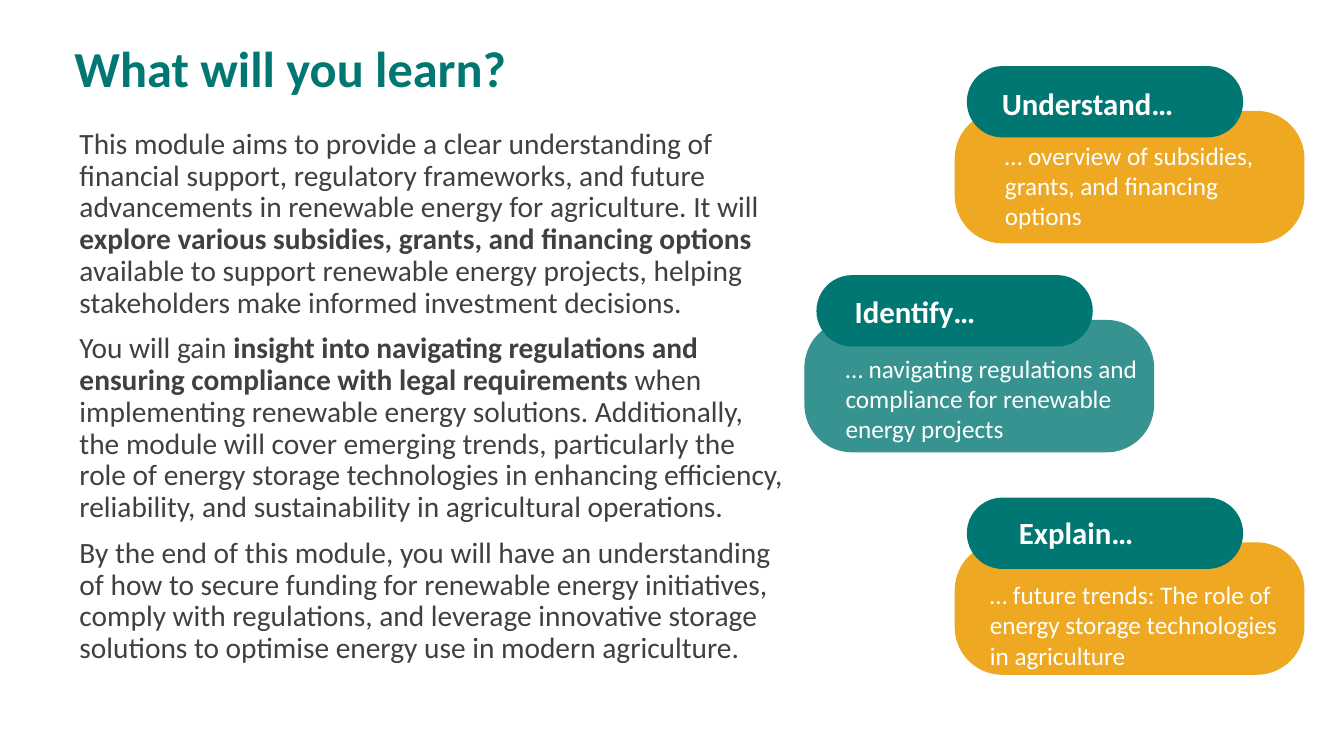
from lxml import etree
from pptx import Presentation
from pptx.dml.color import RGBColor
from pptx.enum import shapes, text
from pptx.oxml import ns
from pptx.util import Pt

TEAL = RGBColor(0x00, 0x77, 0x72)
GOLD = RGBColor(0xEE, 0xA8, 0x21)
GREY = RGBColor(0x40, 0x40, 0x40)
WHITE = RGBColor(0xFF, 0xFF, 0xFF)

GOALS = [
    ("Understand…", "… overview of subsidies, grants, and financing options",
     (682, 79.2), GOLD, 100, (26.5, -22.3), (28.8, 17.3, 213)),
    ("Identify…", "… navigating regulations and compliance for renewable energy projects",
     (574.6, 228.5), TEAL, 79, (28.8, -23.3), (22.3, 20, 227.5)),
    ("Explain…", "… future trends: The role of energy storage technologies in agriculture",
     (682, 387.4), GOLD, 100, (38.8, -23.8), (18, 23, 234.7)),
]

INTRO = [
    [("This module aims to provide a clear understanding of financial support, "
      "regulatory frameworks, and future advancements in renewable energy for "
      "agriculture. It will ", False),
     ("explore various subsidies, grants, and financing options ", True),
     ("available to support renewable energy projects, helping stakeholders make "
      "informed investment decisions.", False)],
    [("You will gain ", False),
     ("insight into navigating regulations and ensuring compliance with legal "
      "requirements ", True),
     ("when implementing renewable energy solutions. Additionally, the module will "
      "cover emerging trends, particularly the role of energy storage technologies "
      "in enhancing efficiency, reliability, and sustainability in agricultural "
      "operations.", False)],
    [("By the end of this module, you will have an understanding of how to secure "
      "funding for renewable energy initiatives, comply with regulations, and "
      "leverage innovative storage solutions to optimise energy use in modern "
      "agriculture.", False)],
]


def style(par, size, color, bold=None):
    """Set the font of a paragraph."""
    font = par.font
    font.name, font.size, font.bold = "Calibri", Pt(size), bold
    font.color.rgb = color


def frame(slide, x, y, w, h):
    """Add a wrapping text box and return its text frame."""
    body = slide.shapes.add_textbox(Pt(x), Pt(y), Pt(w), Pt(h)).text_frame
    body.word_wrap = True
    return body


def label(slide, words, x, y, w, h, size, bold=None):
    """Add one white paragraph of text."""
    par = frame(slide, x, y, w, h).paragraphs[0]
    par.text = words
    style(par, size, WHITE, bold)


def plate(slide, x, y, w, h, round_, color, alpha=100):
    """Add a rounded panel, see-through when alpha is below 100."""
    shape = slide.shapes.add_shape(
        shapes.MSO_SHAPE.ROUNDED_RECTANGLE, Pt(x), Pt(y), Pt(w), Pt(h))
    shape.adjustments[0] = round_
    shape.shadow.inherit = False
    shape.fill.solid()
    shape.fill.fore_color.rgb = color
    shape.line.fill.background()
    if alpha < 100:
        tone = shape.fill._xPr.find(".//" + ns.qn("a:srgbClr"))
        etree.SubElement(tone, ns.qn("a:alpha"), val=str(alpha * 1000))


def card(slide, x, y, goal):
    """Place a goal panel with its heading pill and both texts."""
    head, note, _, color, alpha, (hx, hy), (nx, ny, width) = goal
    plate(slide, x, y, 249.8, 94.6, 0.36, color, alpha)
    plate(slide, x + 8.6, y - 32, 197.4, 51, 0.5, TEAL)
    label(slide, head, x + hx, y + hy, 160, 34, 22, True)
    label(slide, note, x + nx, y + ny, width, 73, 18)


def heading(slide, x, y, w, h):
    """Place and format the slide title."""
    title = slide.shapes.title
    title.left, title.top, title.width, title.height = Pt(x), Pt(y), Pt(w), Pt(h)
    body = title.text_frame
    body.text = "What will you learn?"
    body.auto_size = text.MSO_AUTO_SIZE.NONE
    body.vertical_anchor = text.MSO_ANCHOR.TOP
    par = body.paragraphs[0]
    par.alignment = text.PP_ALIGN.LEFT
    par.line_spacing = 0.9
    style(par, 36, TEAL, True)


def intro(slide, x, y, w, h):
    """Place the introduction with its bold phrases."""
    body = frame(slide, x, y, w, h)
    for i, parts in enumerate(INTRO):
        par = body.add_paragraph() if i else body.paragraphs[0]
        par.line_spacing = 0.9
        if i:
            par.space_before = Pt(10)
        style(par, 21, GREY)
        for words, bold in parts:
            run = par.add_run()
            run.text = words
            font = run.font
            font.name, font.size, font.bold = "Calibri", Pt(21), bold
            font.color.rgb = GREY


def main():
    """Build the slide and save it."""
    deck = Presentation()
    deck.slide_width, deck.slide_height = Pt(960), Pt(540)
    slide = deck.slides.add_slide(deck.slide_layouts[5])
    heading(slide, 46, 28, 576, 51)
    intro(slide, 49.7, 88.6, 517, 389.5)
    for goal in GOALS:
        card(slide, *goal[2], goal)
    deck.save("out.pptx")


if __name__ == "__main__":
    main()
